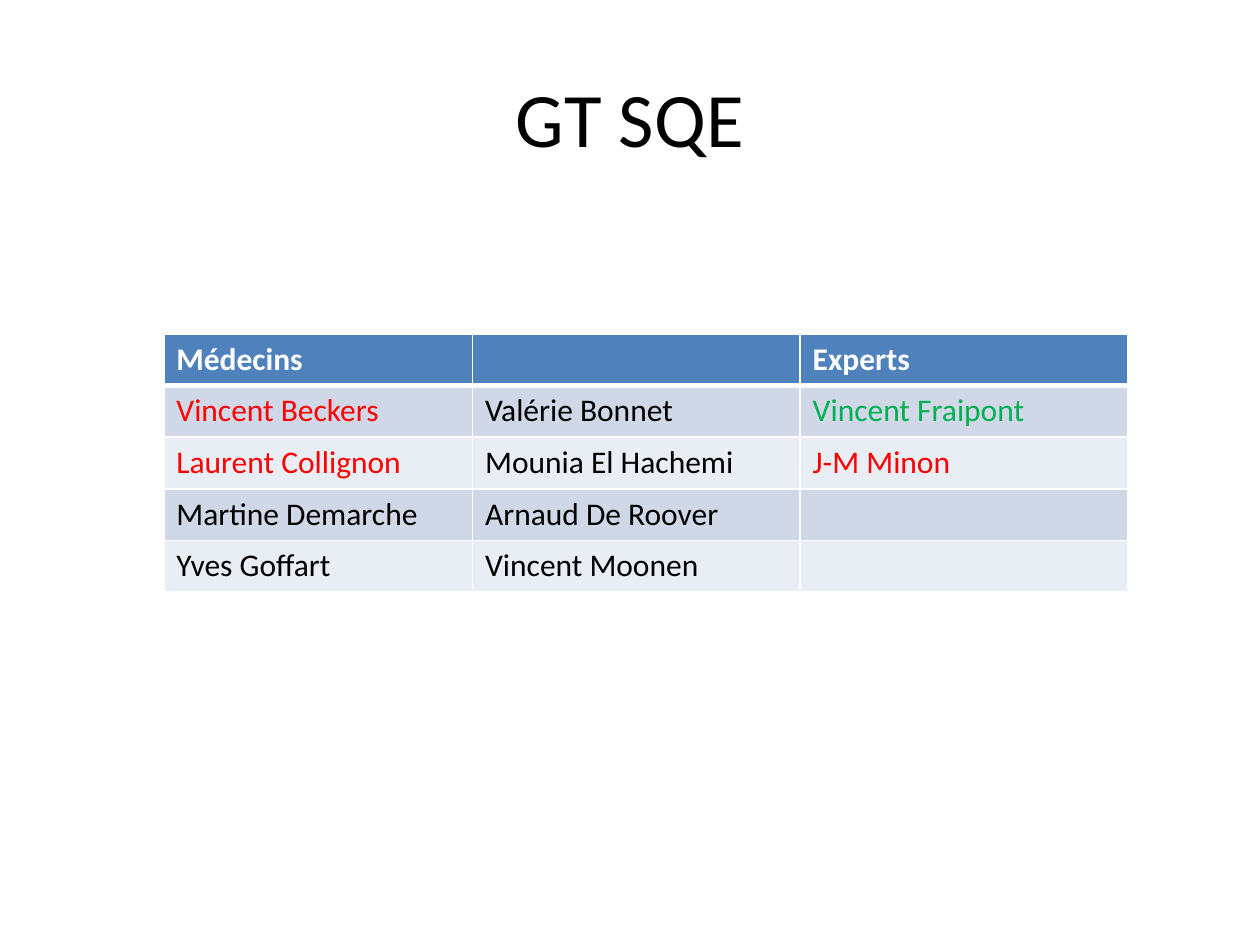
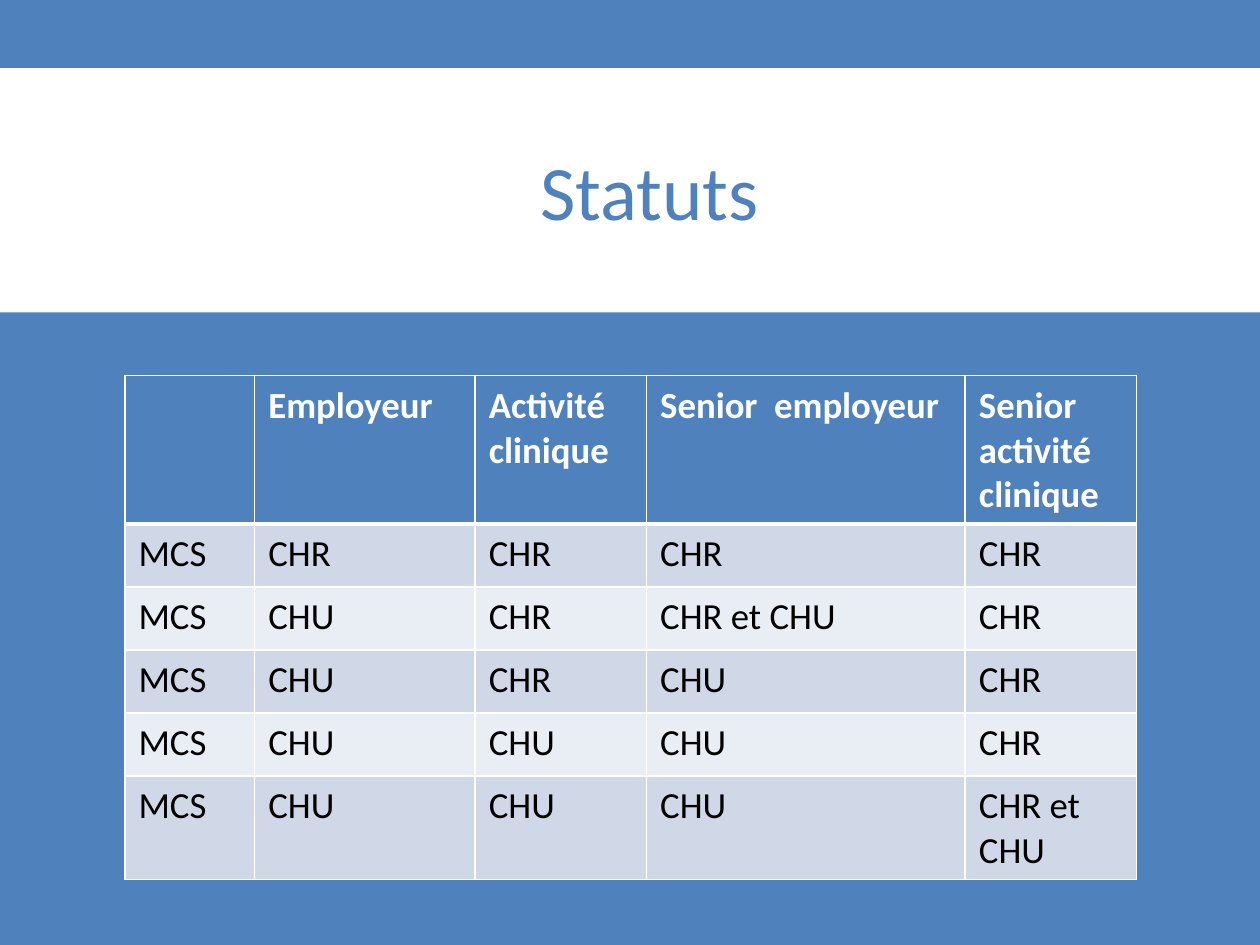
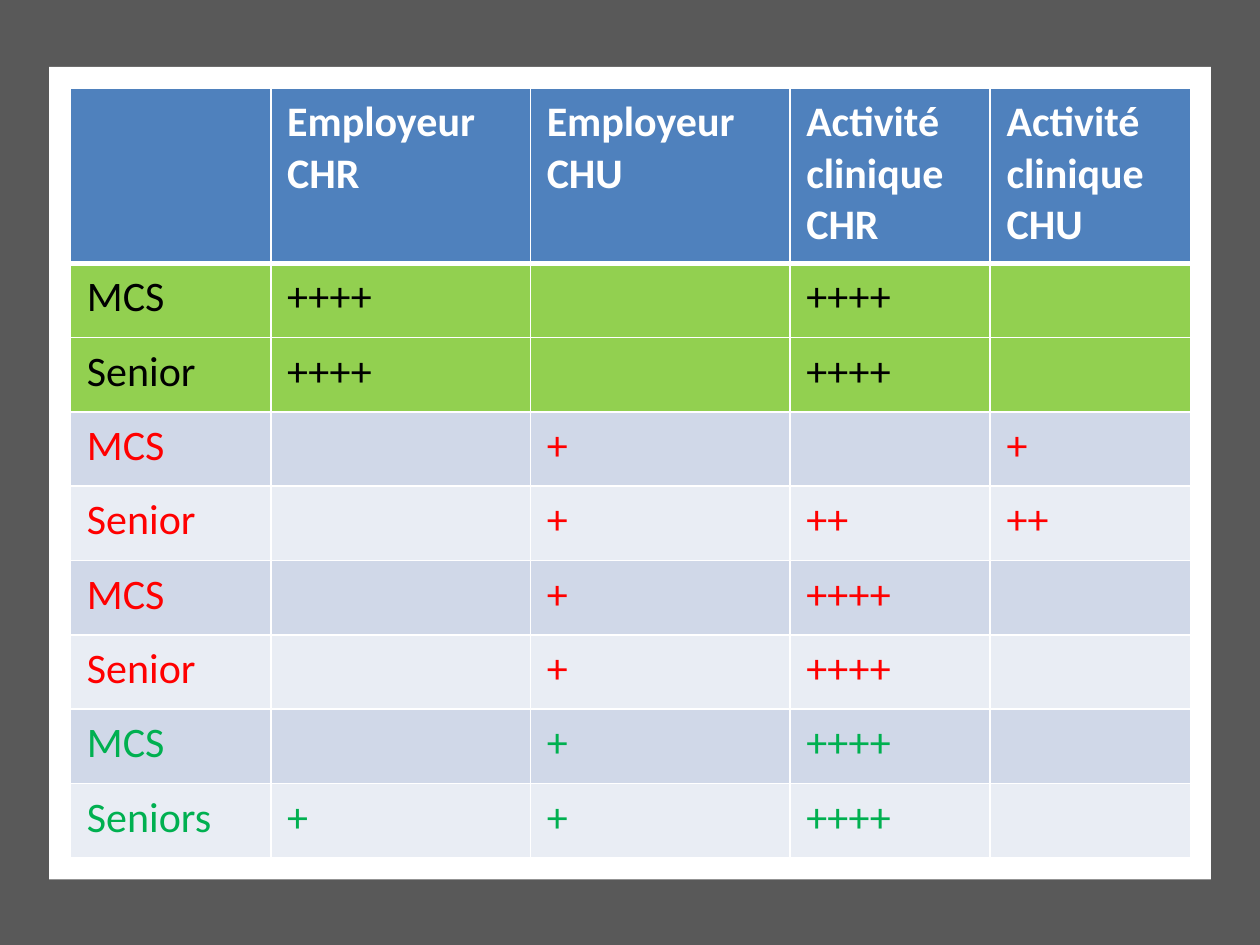
from lxml.etree import SubElement
from pptx import Presentation
from pptx.dml.color import RGBColor
from pptx.enum.shapes import MSO_SHAPE as Shape
from pptx.enum.text import MSO_ANCHOR as Anchor, PP_ALIGN as Align
from pptx.oxml.ns import qn
from pptx.util import Inches, Pt

BLUE = RGBColor(0x4F, 0x81, 0xBD)
WHITE = RGBColor(0xFF, 0xFF, 0xFF)
BLACK = RGBColor(0x00, 0x00, 0x00)
GREY = RGBColor(0x59, 0x59, 0x59)
RED = RGBColor(0xFF, 0x00, 0x00)
GREEN = RGBColor(0x00, 0xB0, 0x50)
LIME = RGBColor(0x92, 0xD0, 0x50)
DARK_BAND = RGBColor(0xD0, 0xD8, 0xE8)
LIGHT_BAND = RGBColor(0xE9, 0xED, 0xF4)
FONT = "Calibri"


def add_text(frame, text, size, color, bold=False, align=Align.LEFT):
    for index, line in enumerate(text.split("\n")):
        para = frame.add_paragraph() if index else frame.paragraphs[0]
        para.alignment = align
        span = para.add_run()
        span.text = line
        span.font.name = FONT
        span.font.size = Pt(size)
        span.font.bold = bold
        span.font.color.rgb = color


def add_grid(page, corner, widths, heights, margins, size, rows, inks, fills):
    left, top = corner
    frame = page.shapes.add_table(
        len(rows), len(widths), Inches(left), Inches(top),
        Inches(sum(widths)), Inches(sum(heights)))
    table = frame.table
    for column, width in zip(table.columns, widths):
        column.width = Inches(width)
    for row, height in zip(table.rows, heights):
        row.height = Inches(height)
    for r, texts in enumerate(rows):
        for c, text in enumerate(texts):
            cell = table.cell(r, c)
            cell.margin_left = cell.margin_right = Inches(margins[0])
            cell.margin_top = cell.margin_bottom = Inches(margins[1])
            properties = cell._tc.get_or_add_tcPr()
            for side in ("lnL", "lnR", "lnT", "lnB"):
                thick = (r, side) in ((0, "lnB"), (1, "lnT"))
                line = SubElement(properties, qn("a:" + side), w=str(Pt(3 if thick else 1)))
                paint = SubElement(line, qn("a:solidFill"))
                SubElement(paint, qn("a:srgbClr"), val=str(WHITE))
            cell.fill.solid()
            cell.fill.fore_color.rgb = fills[r]
            if text:
                add_text(cell.text_frame, text, size, inks[r][c], bold=r == 0)


deck = Presentation()
deck.slide_width = Inches(10)
deck.slide_height = Inches(7.5)

backgrounds = [WHITE, BLUE, WHITE]
panels = [
    [],
    [(0, 0.54, 10, 1.94, WHITE)],
    [(0, 0, 10, 7.5, GREY), (0.39, 0.53, 9.22, 6.45, WHITE)],
]
titles = [
    ("GT SQE", (0.5, 0.3, 9, 1.25), BLACK),
    ("Statuts", (0.99, 0.83, 8.33, 1.35), BLUE),
    None,
]
pages = []
for background, page_panels, title in zip(backgrounds, panels, titles):
    page = deck.slides.add_slide(deck.slide_layouts[6])
    page.background.fill.solid()
    page.background.fill.fore_color.rgb = background
    for *place, color in page_panels:
        panel = page.shapes.add_shape(Shape.RECTANGLE, *map(Inches, place))
        panel.shadow.inherit = False
        panel.fill.solid()
        panel.fill.fore_color.rgb = color
        panel.line.fill.background()
    if title:
        text, place, color = title
        box = page.shapes.add_textbox(*map(Inches, place))
        box.text_frame.word_wrap = True
        box.text_frame.vertical_anchor = Anchor.MIDDLE
        add_text(box.text_frame, text, 44, color, align=Align.CENTER)
    pages.append(page)

members_page, status_page, summary_page = pages
bands = [DARK_BAND, LIGHT_BAND]

members = [
    ["Médecins", "", "Experts"],
    ["Vincent Beckers", "Valérie Bonnet", "Vincent Fraipont"],
    ["Laurent Collignon", "Mounia El Hachemi", "J-M Minon"],
    ["Martine Demarche", "Arnaud De Roover", ""],
    ["Yves Goffart", "Vincent Moonen", ""],
]
member_inks = [[WHITE] * 3, [RED, BLACK, GREEN], [RED, BLACK, RED]] + [[BLACK] * 3] * 2
add_grid(members_page, (1.3, 2.65), [2.45, 2.6, 2.6], [0.41] * 5, (0.1, 0.05), 18,
         members, member_inks, [BLUE] + bands * 2)

statuses = [
    ["", "Employeur", "Activité clinique", "Senior  employeur", "Senior activité clinique"],
    ["MCS", "CHR", "CHR", "CHR", "CHR"],
    ["MCS", "CHU", "CHR", "CHR et CHU", "CHR"],
    ["MCS", "CHU", "CHR", "CHU", "CHR"],
    ["MCS", "CHU", "CHU", "CHU", "CHR"],
    ["MCS", "CHU", "CHU", "CHU", "CHR et CHU"],
]
add_grid(status_page, (0.99, 2.98), [1.03, 1.75, 1.36, 2.53, 1.36], [1.18] + [0.5] * 5,
         (0.11, 0.06), 21, statuses, [[WHITE] * 5] + [[BLACK] * 5] * 5, [BLUE] + bands * 3)

summary = [
    ["", "Employeur CHR", "Employeur\nCHU", "Activité clinique CHR", "Activité clinique CHU"],
    ["MCS", "++++", "", "++++", ""],
    ["Senior", "++++", "", "++++", ""],
    ["MCS", "", "+", "", "+"],
    ["Senior", "", "+", "++", "++"],
    ["MCS", "", "+", "++++", ""],
    ["Senior", "", "+", "++++", ""],
    ["MCS", "", "+", "++++", ""],
    ["Seniors", "+", "+", "++++", ""],
]
summary_inks = [[ink] * 5 for ink in [WHITE] + [BLACK] * 2 + [RED] * 4 + [GREEN] * 2]
add_grid(summary_page, (0.56, 0.7), [1.59, 2.06, 2.06, 1.59, 1.59], [1.39] + [0.59] * 8,
         (0.13, 0.07), 24, summary, summary_inks, [BLUE] + [LIME] * 2 + bands * 3)

deck.save("out.pptx")
